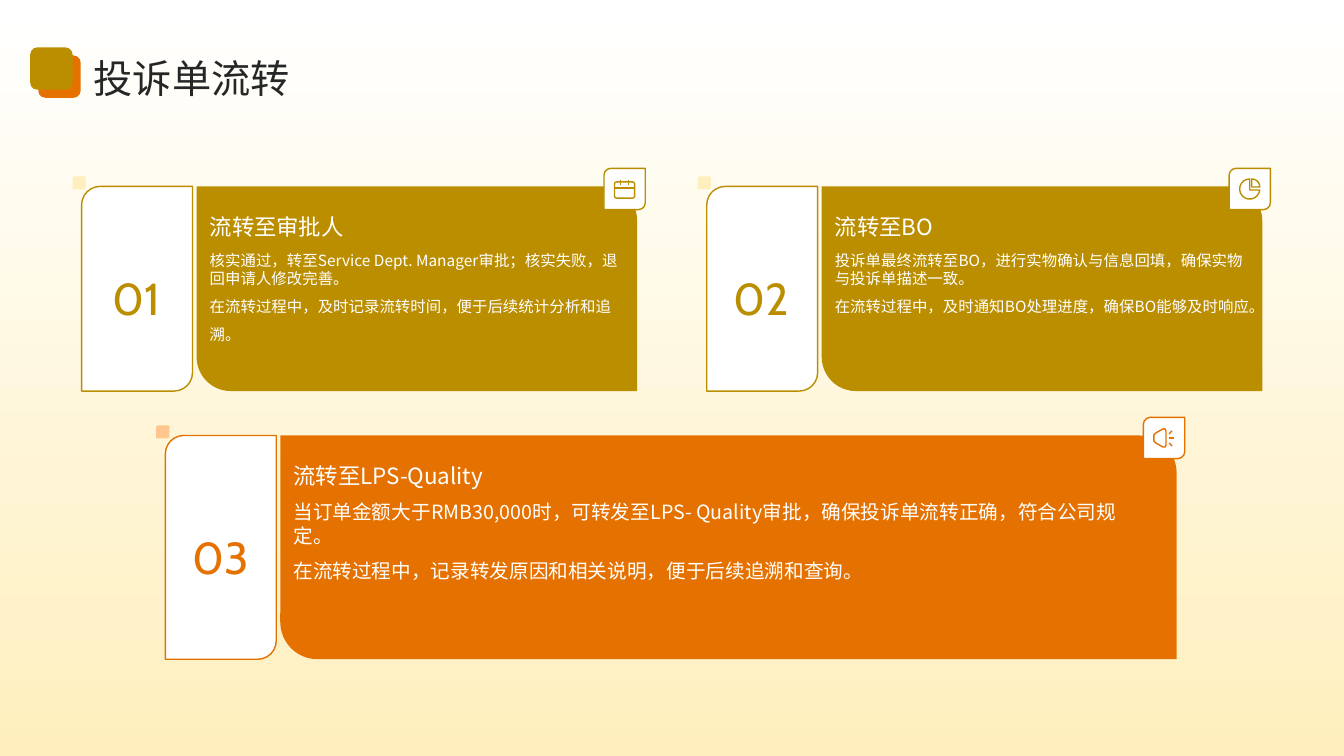
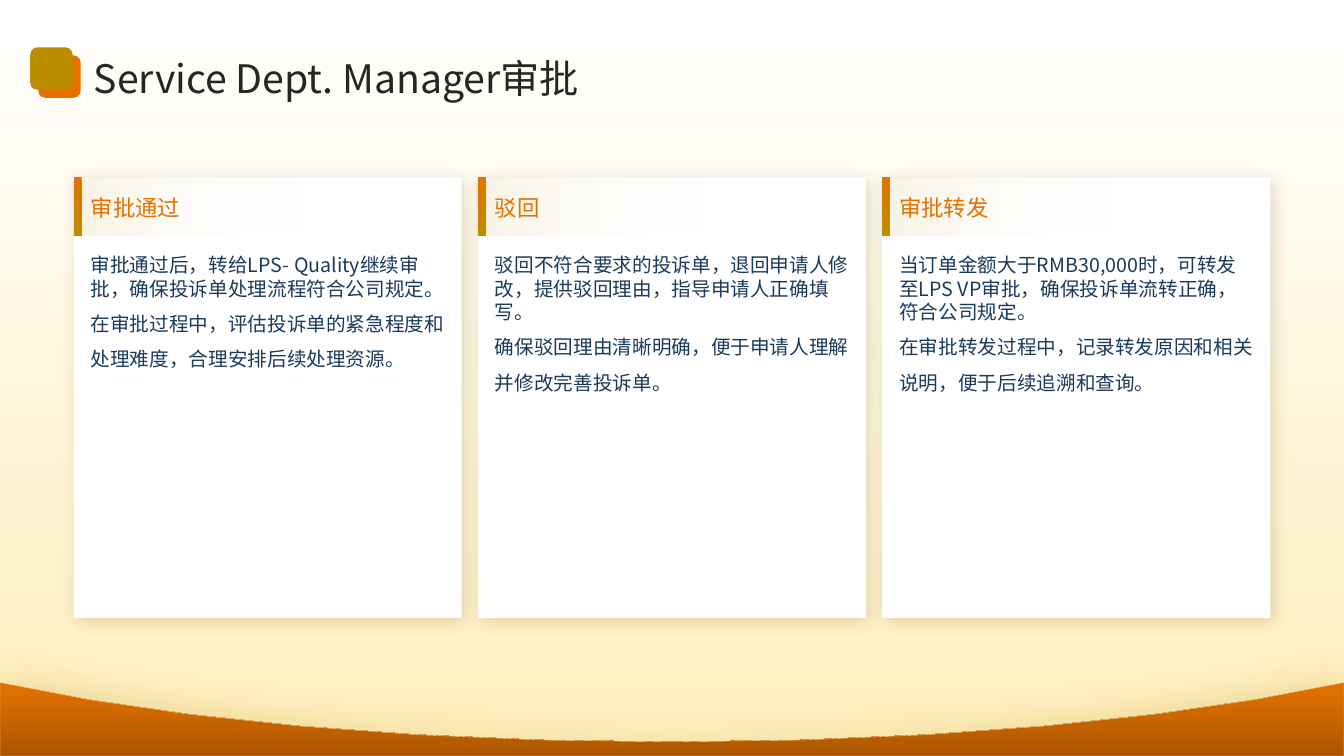
from math import cos, pi, sin

from pptx import Presentation
from pptx.dml.color import RGBColor
from pptx.enum.shapes import MSO_SHAPE
from pptx.enum.text import MSO_ANCHOR, PP_ALIGN
from pptx.oxml import parse_xml
from pptx.oxml.ns import nsdecls, qn
from pptx.util import Inches, Pt

RECTANGLE = MSO_SHAPE.RECTANGLE
PROCESS = MSO_SHAPE.FLOWCHART_PROCESS
ROUNDED = MSO_SHAPE.ROUNDED_RECTANGLE
DIAGONAL = MSO_SHAPE.ROUND_2_DIAG_RECTANGLE
TOP, MIDDLE = MSO_ANCHOR.TOP, MSO_ANCHOR.MIDDLE
LEFT, CENTER = PP_ALIGN.LEFT, PP_ALIGN.CENTER

WIDTH, HEIGHT = 13.33, 7.5
BADGE = 0.41
GOLD, ORANGE, RUST = "BB8E00", "E57200", "AC5600"
WHITE, CREAM, PEACH = "FFFFFF", "FFEFBE", "FFC78F"
INK, NAVY, SHADE = "262626", "1A3B5B", "5E4700"
TEXT_FONT, NUMBER_FONT = "Noto Sans CJK SC", "Cabin"


def color(value):
    return RGBColor.from_string(value)


def arc(center_x, center_y, radius, start, end, steps):
    angles = [start + (end - start) * i / steps for i in range(steps + 1)]
    return [(center_x + radius * cos(a), center_y + radius * sin(a)) for a in angles]


def rounded_outline(half_width, top, bottom, radius):
    left, right = radius - half_width, half_width - radius
    corners = [(left, top + radius), (right, top + radius),
               (right, bottom - radius), (left, bottom - radius)]
    points = []
    for number, (x, y) in enumerate(corners):
        start = pi + number * pi / 2
        points += arc(x, y, radius, start, start + pi / 2, 2)
    return points + points[:1]


CALENDAR = [
    rounded_outline(0.1, -0.07, 0.09, 0.02),
    [(-0.1, -0.01), (0.1, -0.01)],
    [(-0.04, -0.09), (-0.04, -0.04)],
    [(0.04, -0.09), (0.04, -0.04)],
]
PIE = [
    [(0, -0.1), (0, 0.01), (0.1, 0.01)] + arc(0, 0, 0.1, 0.1, 1.5 * pi, 14),
    [(0.02, -0.02)] + arc(0.02, -0.02, 0.08, -pi / 2, 0, 5) + [(0.02, -0.02)],
]
HORN = [
    [(-0.1, -0.03), (-0.08, -0.05), (-0.01, -0.09), (0.01, -0.09), (0.02, -0.07),
     (0.02, 0.07), (0.01, 0.09), (-0.01, 0.09), (-0.08, 0.05), (-0.1, 0.03), (-0.1, -0.03)],
    [(0.05, -0.04), (0.08, -0.07)],
    [(0.05, 0), (0.1, 0)],
    [(0.05, 0.05), (0.08, 0.08)],
]


class Designer:
    """Hold the shared style and draw each element on the current page."""

    def __init__(self):
        self.deck = Presentation()
        self.deck.slide_width, self.deck.slide_height = Inches(WIDTH), Inches(HEIGHT)
        self.page = None

    def start_page(self):
        self.page = self.deck.slides.add_slide(self.deck.slide_layouts[6])
        backdrop = self.box(PROCESS, 0, 0, WIDTH, HEIGHT, WHITE)
        self.gradient(backdrop, WHITE, CREAM, 270)

    def title(self, text):
        self.text([text], 0.93, 0.49, 11.67, 0.51, 28, INK, spacing=1.1, anchor=MIDDLE)
        self.box(ROUNDED, 0.38, 0.55, 0.42, 0.42, ORANGE)
        self.box(ROUNDED, 0.3, 0.47, 0.42, 0.42, GOLD)

    def finish(self, shape, fill, line=None, line_width=1):
        shape.shadow.inherit = False
        if fill:
            shape.fill.solid()
            shape.fill.fore_color.rgb = color(fill)
        else:
            shape.fill.background()
        if line:
            shape.line.color.rgb = color(line)
            shape.line.width = Pt(line_width)
        else:
            shape.line.fill.background()
        return shape

    def box(self, kind, x, y, width, height, fill, line=None):
        shape = self.page.shapes.add_shape(
            kind, Inches(x), Inches(y), Inches(width), Inches(height))
        return self.finish(shape, fill, line)

    def gradient(self, shape, first, last, angle, opacities=()):
        shape.fill.gradient()
        shape.fill.gradient_angle = angle
        for stop, value, position in zip(shape.fill.gradient_stops, (first, last), (0, 1)):
            stop.color.rgb = color(value)
            stop.position = position
        self.fade(shape, opacities)

    def fade(self, shape, opacities):
        tints = shape._element.spPr.iter(qn("a:srgbClr"))
        for tint, opacity in zip(list(tints), opacities):
            tint.append(parse_xml(f'<a:alpha {nsdecls("a")} val="{opacity * 1000}"/>'))

    def shadow(self, shape, tint, opacity, blur, distance, angle):
        effects = shape._element.spPr.find(qn("a:effectLst"))
        effects.append(parse_xml(
            f'<a:outerShdw {nsdecls("a")} blurRad="{Pt(blur)}" dist="{Pt(distance)}" '
            f'dir="{angle * 60000}" algn="ctr" rotWithShape="0"><a:srgbClr val="{tint}">'
            f'<a:alpha val="{opacity * 1000}"/></a:srgbClr></a:outerShdw>'))

    def text(self, lines, x, y, width, height, size, ink, spacing=1.3,
             anchor=TOP, align=LEFT, font=TEXT_FONT):
        box = self.page.shapes.add_textbox(
            Inches(x), Inches(y), Inches(width), Inches(height))
        frame = box.text_frame
        frame.word_wrap = True
        frame.vertical_anchor = anchor
        frame.margin_left = frame.margin_right = frame.margin_top = frame.margin_bottom = 0
        frame.text = "\n".join(lines)
        for para in frame.paragraphs:
            para.alignment = align
            para.line_spacing = spacing
            for span in para.runs:
                span.font.size = Pt(size)
                span.font.name = font
                span.font.color.rgb = color(ink)
                properties = span.font._element
                properties.append(parse_xml(f'<a:ea {nsdecls("a")} typeface="{font}"/>'))
        return frame

    def body(self, lines, *place):
        opening = self.text(lines, *place, spacing=1.5).paragraphs[0]
        opening.line_spacing = 1.0
        opening._p.get_or_add_pPr().set("hangingPunct", "0")

    def outline(self, contours, x, y, closed=False):
        placed = [[(Inches(x + dx), Inches(y + dy)) for dx, dy in contour]
                  for contour in contours]
        builder = self.page.shapes.build_freeform(*placed[0][0])
        for number, contour in enumerate(placed):
            if number:
                builder.move_to(*contour[0])
            builder.add_line_segments(contour[1:], close=closed)
        return builder.convert_to_shape()

    def numbered_card(self, number, heading, lines, icon, x, y, width, height,
                      accent, tint, size, text_width):
        body_x = x + 1.14
        text_x = body_x + 0.13
        badge_x, badge_y = body_x + width - 0.33, y - 0.18
        self.box(DIAGONAL, x, y, 1.1, height, WHITE, accent)
        panel = self.box(DIAGONAL, body_x, y, width, height, accent)
        panel.adjustments[0], panel.adjustments[1] = 0, 1 / 6
        self.body(lines, text_x, y + 0.64, text_width, height - 0.85, size, WHITE)
        self.box(DIAGONAL, badge_x, badge_y, BADGE, BADGE, WHITE, accent)
        drawing = self.outline(icon, badge_x + BADGE / 2, badge_y + BADGE / 2)
        self.finish(drawing, None, accent)
        self.text([number], x + 0.11, y + (height - 0.67) / 2, 0.87, 0.67, 32, accent,
                  align=CENTER, font=NUMBER_FONT)
        self.box(DIAGONAL, x - 0.09, y - 0.1, 0.13, 0.13, tint)
        self.text([heading], text_x, y + 0.15, text_width, 0.41, 16, WHITE, anchor=MIDDLE)

    def column(self, heading, lines, x):
        y = 1.76
        card = self.box(RECTANGLE, x, y, 3.85, 4.37, WHITE)
        self.shadow(card, SHADE, 19, 12, 3, 45)
        band = self.box(RECTANGLE, x, y, 2.4, 0.58, WHITE)
        self.gradient(band, GOLD, WHITE, 0, (11, 0))
        bar = self.box(RECTANGLE, x, y, 0.08, 0.58, ORANGE)
        self.gradient(bar, ORANGE, GOLD, 270)
        self.text([heading], x + 0.17, y, 3.53, 0.58, 16, ORANGE, spacing=1.1, anchor=MIDDLE)
        self.body(lines, x + 0.17, y + 0.75, 3.53, 3.4, 14, NAVY)

    def wave(self, top, bottom, steps=6):
        middle = WIDTH / 2
        bend = top + 0.62 * (bottom - top)
        half = []
        for step in range(steps + 1):
            t = step / steps
            weights = ((1 - t) ** 3, 3 * t * (1 - t) ** 2, 3 * t * t * (1 - t), t ** 3)
            half.append((sum(w * v for w, v in zip(weights, (0, 1.65, 4.03, middle))),
                         sum(w * v for w, v in zip(weights, (top, bend, bottom, bottom)))))
        mirror = [(WIDTH - x, y) for x, y in reversed(half[:-1])]
        return self.outline([half + mirror + [(WIDTH, HEIGHT), (0, HEIGHT)]], 0, 0, True)

    def footer(self):
        halo = self.finish(self.wave(6.45, 7.35), CREAM)
        self.fade(halo, (18,))
        hill = self.finish(self.wave(6.77, 7.36), ORANGE, CREAM, 0.25)
        self.gradient(hill, ORANGE, RUST, 270)
        self.shadow(hill, GOLD, 26, 29, 3, 270)


def main():
    designer = Designer()
    designer.start_page()
    designer.numbered_card(
        "01", "流转至审批人",
        ["核实通过，转至Service Dept. Manager审批；核实失败，退回申请人修改完善。",
         "在流转过程中，及时记录流转时间，便于后续统计分析和追溯。"],
        CALENDAR, 0.81, 1.85, 4.37, 2.03, GOLD, CREAM, 11, 4.11)
    designer.numbered_card(
        "02", "流转至BO",
        ["投诉单最终流转至BO，进行实物确认与信息回填，确保实物与投诉单描述一致。",
         "在流转过程中，及时通知BO处理进度，确保BO能够及时响应。"],
        PIE, 7.01, 1.85, 4.37, 2.03, GOLD, CREAM, 11, 4.11)
    designer.numbered_card(
        "03", "流转至LPS-Quality",
        ["当订单金额大于RMB30,000时，可转发至LPS- Quality审批，确保投诉单流转正确，符合公司规定。",
         "在流转过程中，记录转发原因和相关说明，便于后续追溯和查询。"],
        HORN, 1.64, 4.32, 8.89, 2.22, ORANGE, PEACH, 14, 8.45)
    designer.title("投诉单流转")

    designer.start_page()
    designer.footer()
    columns = [
        ("审批通过",
         ["审批通过后，转给LPS- Quality继续审批，确保投诉单处理流程符合公司规定。",
          "在审批过程中，评估投诉单的紧急程度和处理难度，合理安排后续处理资源。"]),
        ("驳回",
         ["驳回不符合要求的投诉单，退回申请人修改，提供驳回理由，指导申请人正确填写。",
          "确保驳回理由清晰明确，便于申请人理解并修改完善投诉单。"]),
        ("审批转发",
         ["当订单金额大于RMB30,000时，可转发至LPS VP审批，确保投诉单流转正确，符合公司规定。",
          "在审批转发过程中，记录转发原因和相关说明，便于后续追溯和查询。"]),
    ]
    for number, (heading, lines) in enumerate(columns):
        designer.column(heading, lines, 0.73 + number * 4.01)
    designer.title("Service Dept. Manager审批")
    designer.deck.save("out.pptx")


if __name__ == "__main__":
    main()
